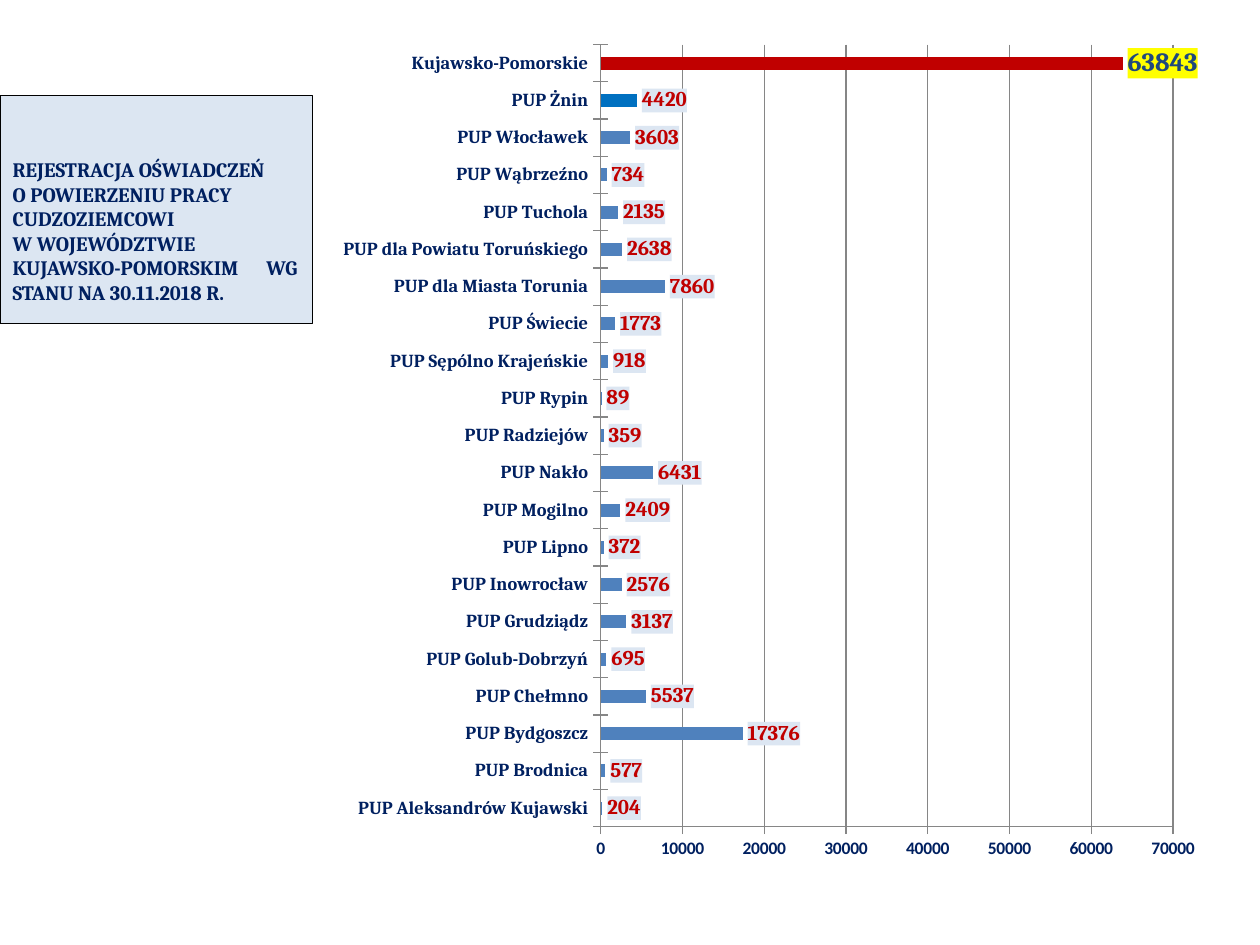
from lxml import etree
from pptx import Presentation
from pptx.chart.data import CategoryChartData
from pptx.dml.color import RGBColor
from pptx.enum.chart import XL_CHART_TYPE, XL_LABEL_POSITION, XL_TICK_MARK
from pptx.enum.text import MSO_ANCHOR, PP_ALIGN
from pptx.oxml import parse_xml
from pptx.oxml.ns import nsdecls, qn
from pptx.util import Pt

BAR = XL_CHART_TYPE.BAR_CLUSTERED
OUTSIDE = XL_LABEL_POSITION.OUTSIDE_END
CROSS = XL_TICK_MARK.CROSS
TOP = MSO_ANCHOR.TOP
LEFT = PP_ALIGN.LEFT

NAVY = RGBColor(0x00, 0x20, 0x60)
RED = RGBColor(0xC0, 0x00, 0x00)
BLUE = RGBColor(0x4F, 0x81, 0xBD)
BRIGHT = RGBColor(0x00, 0x70, 0xC0)
STEEL = RGBColor(0x1F, 0x49, 0x7D)
PALE = RGBColor(0xDC, 0xE6, 0xF2)
YELLOW = RGBColor(0xFF, 0xFF, 0x00)
GRAY = RGBColor(0x86, 0x86, 0x86)
BLACK = RGBColor(0x00, 0x00, 0x00)

SERIF = "Cambria"
SANS = "Calibri"

TITLE = [
    "REJESTRACJA OŚWIADCZEŃ",
    "O POWIERZENIU PRACY CUDZOZIEMCOWI",
    "W WOJEWÓDZTWIE KUJAWSKO-POMORSKIM\tWG STANU NA 30.11.2018 R.",
]
COUNTS = {
    "PUP Aleksandrów Kujawski": 204,
    "PUP Brodnica": 577,
    "PUP Bydgoszcz": 17376,
    "PUP Chełmno": 5537,
    "PUP Golub-Dobrzyń": 695,
    "PUP Grudziądz": 3137,
    "PUP Inowrocław": 2576,
    "PUP Lipno": 372,
    "PUP Mogilno": 2409,
    "PUP Nakło": 6431,
    "PUP Radziejów": 359,
    "PUP Rypin": 89,
    "PUP Sępólno Krajeńskie": 918,
    "PUP Świecie": 1773,
    "PUP dla Miasta Torunia": 7860,
    "PUP dla Powiatu Toruńskiego": 2638,
    "PUP Tuchola": 2135,
    "PUP Wąbrzeźno": 734,
    "PUP Włocławek": 3603,
    "PUP Żnin": 4420,
    "Kujawsko-Pomorskie": 63843,
}


def style(font, size, color=NAVY, face=SERIF):
    font.name = face
    font.size = Pt(size)
    font.bold = True
    font.color.rgb = color


def write(frame, lines, size, tab=None, **look):
    """Fill a text frame with one paragraph per line."""
    frame.text = "\n".join(lines)
    for par in frame.paragraphs:
        par.alignment = LEFT
        for run in par.runs:
            style(run.font, size, **look)
        if tab:
            stops = etree.SubElement(par._p.get_or_add_pPr(), qn("a:tabLst"))
            etree.SubElement(stops, qn("a:tab"), pos=str(Pt(tab)), algn="l")


def add_title(slide, left, top, width, height):
    box = slide.shapes.title
    box.left, box.top, box.width, box.height = map(Pt, (left, top, width, height))
    box.fill.solid()
    box.fill.fore_color.rgb = PALE
    box.line.color.rgb = BLACK
    box.line.width = Pt(0.75)
    frame = box.text_frame
    frame.word_wrap = True
    frame.vertical_anchor = TOP
    frame.margin_top = Pt(35)
    write(frame, TITLE, 11.7, tab=145)


def back(label, color):
    """Give a chart label element a solid background."""
    label.find(qn("c:txPr")).addprevious(parse_xml(
        f'<c:spPr {nsdecls("c", "a")}><a:solidFill>'
        f'<a:srgbClr val="{color}"/></a:solidFill></c:spPr>'))


def place_plot(chart, x, y, w, h):
    """Fix the inner plot area, in fractions of the chart."""
    area = chart._chartSpace.find(f'.//{qn("c:plotArea")}')
    for old in area.findall(qn("c:layout")):
        area.remove(old)
    spots = "".join(f'<c:{tag} val="{val}"/>' for tag, val in
                    zip("xywh", (x, y, w, h)))
    area.insert(0, parse_xml(
        f'<c:layout {nsdecls("c")}><c:manualLayout>'
        '<c:layoutTarget val="inner"/><c:xMode val="edge"/><c:yMode val="edge"/>'
        f'{spots}</c:manualLayout></c:layout>'))


def set_axes(chart):
    cats, vals = chart.category_axis, chart.value_axis
    for axis, size, face in ((cats, 10.5, SERIF), (vals, 10, SANS)):
        axis.major_tick_mark = CROSS
        axis.format.line.color.rgb = GRAY
        style(axis.tick_labels.font, size, face=face)
    cats.has_major_gridlines = False
    vals.minimum_scale = 0
    vals.maximum_scale = 70000
    vals.major_unit = 10000
    vals.has_major_gridlines = True
    vals.major_gridlines.format.line.color.rgb = GRAY


def set_bars(plot):
    plot.gap_width = 189
    plot.overlap = -40
    plot.vary_by_categories = False
    bars = plot.series[0]
    bars.invert_if_negative = False
    last = len(COUNTS) - 1
    fills = [bars.format.fill]
    fills += [bars.points[i].format.fill for i in (last - 1, last)]
    for fill, color in zip(fills, (BLUE, BRIGHT, RED)):
        fill.solid()
        fill.fore_color.rgb = color

    labels = bars.data_labels
    labels.show_value = True
    labels.position = OUTSIDE
    style(labels.font, 12, RED)
    back(labels._element, PALE)

    total = bars.points[last].data_label
    style(total.font, 15, STEEL)
    total.position = OUTSIDE
    back(labels._element.find(qn("c:dLbl")), YELLOW)


def add_bars(slide, left, top, width, height):
    data = CategoryChartData()
    data.categories = list(COUNTS)
    data.add_series("Series 1", list(COUNTS.values()))
    box = map(Pt, (left, top, width, height))
    chart = slide.shapes.add_chart(BAR, *box, data).chart
    chart.has_title = False
    chart.has_legend = False
    chart.font.name = SANS
    chart.font.size = Pt(18)
    chart.font.color.rgb = BLACK
    set_axes(chart)
    set_bars(chart.plots[0])
    place_plot(chart, 0.315, 0.011, 0.648, 0.928)


def main():
    deck = Presentation()
    deck.slide_width, deck.slide_height = Pt(720), Pt(540)
    slide = deck.slides.add_slide(deck.slide_layouts[5])
    add_title(slide, 0, 54.7, 178.6, 130.3)
    add_bars(slide, 184.3, 20.2, 504.7, 481.7)
    deck.save("out.pptx")


if __name__ == "__main__":
    main()
